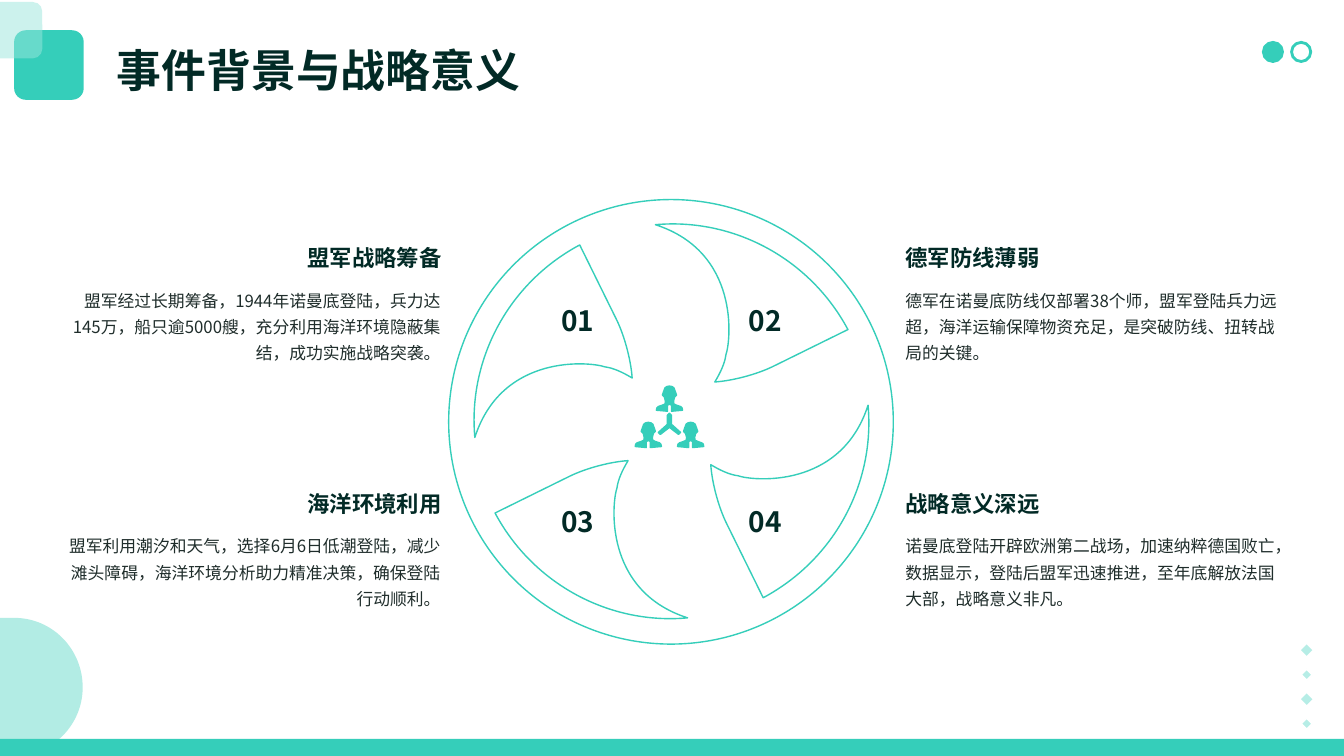
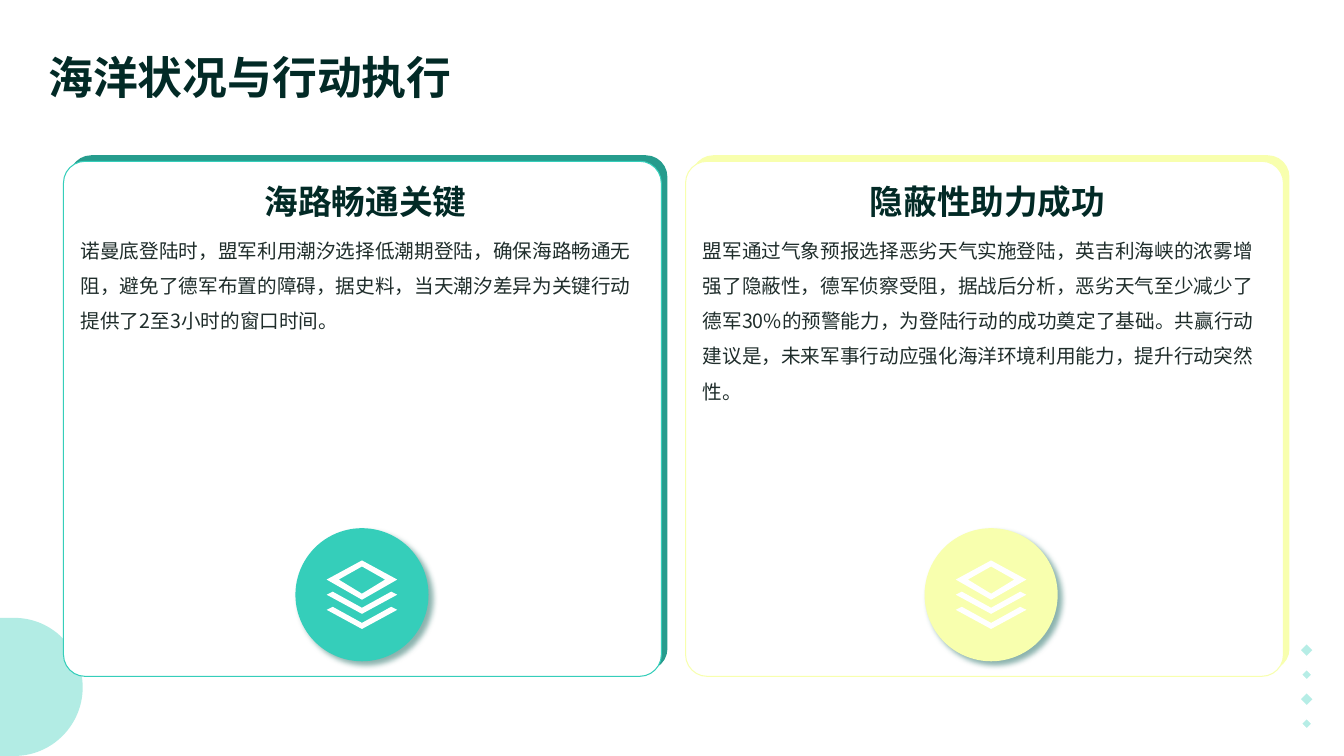
"""Build two slides on the Normandy landing: a four-blade pinwheel and a pair of cards."""
import pptx
import pptx.util
import pptx.dml.color
import pptx.enum.shapes
import pptx.enum.text
import pptx.oxml.ns
import lxml.etree

SHAPE = pptx.enum.shapes.MSO_SHAPE
ALIGN = pptx.enum.text.PP_ALIGN
ANCHOR = pptx.enum.text.MSO_ANCHOR
WIDTH, HEIGHT = 13.33, 7.5
FONT = "Noto Sans CJK SC"
TEAL, DEEP, PALE, LEMON = "35CEBA", "269C8D", "9AE6DC", "F8FFAE"
WHITE, SHADOW, HEADING, BODY = "FFFFFF", "19685E", "022A26", "1F2D2B"

TITLE_STYLE = dict(size=32, color=HEADING, bold=True, anchor=ANCHOR.MIDDLE, inset=(0.1, 0.05),
                   para=dict(line_spacing=1.2))
NUMBER_STYLE = dict(TITLE_STYLE, size=20, para=dict(line_spacing=1.2, alignment=ALIGN.CENTER))
HEAD_STYLE = dict(size=16, color=HEADING, bold=True, anchor=ANCHOR.MIDDLE)
CARD_HEAD_STYLE = dict(size=24, color=HEADING, bold=True, anchor=ANCHOR.BOTTOM,
                       para=dict(alignment=ALIGN.CENTER))
BODY_SPACING = dict(space_before=pptx.util.Pt(3), space_after=pptx.util.Pt(3))

TOPICS_TITLE = "事件背景与战略意义"
TOPICS = [
    ("盟军战略筹备", "盟军经过长期筹备，1944年诺曼底登陆，兵力达145万，船只逾5000艘，充分利用海洋环境隐蔽集结，成功实施战略突袭。"),
    ("德军防线薄弱", "德军在诺曼底防线仅部署38个师，盟军登陆兵力远超，海洋运输保障物资充足，是突破防线、扭转战局的关键。"),
    ("海洋环境利用", "盟军利用潮汐和天气，选择6月6日低潮登陆，减少滩头障碍，海洋环境分析助力精准决策，确保登陆行动顺利。"),
    ("战略意义深远", "诺曼底登陆开辟欧洲第二战场，加速纳粹德国败亡，数据显示，登陆后盟军迅速推进，至年底解放法国大部，战略意义非凡。"),
]
TOPIC_COLUMNS = [(0.69, 0.6, 5.2, ALIGN.RIGHT), (8.98, 8.98, 7.06, ALIGN.LEFT)]
TOPIC_ROWS = [(2.3, 2.95), (4.74, 4.95)]

CARDS_TITLE = "海洋状况与行动执行"
CARDS = [
    ("海路畅通关键", "诺曼底登陆时，盟军利用潮汐选择低潮期登陆，确保海路畅通无阻，避免了德军布置的障碍，据史料，当天潮汐差异为关键行动提供了2至3小时的窗口时间。", DEEP, TEAL),
    ("隐蔽性助力成功", "盟军通过气象预报选择恶劣天气实施登陆，英吉利海峡的浓雾增强了隐蔽性，德军侦察受阻，据战后分析，恶劣天气至少减少了德军30%的预警能力，为登陆行动的成功奠定了基础。共赢行动建议是，未来军事行动应强化海洋环境利用能力，提升行动突然性。", LEMON, LEMON),
]

CORNER = [(0.14, 0), (0, 0), (0, 1.37), (0.14, 1.37),
          (0.52, 1.37, 0.82, 1.06, 0.82, 0.69), (0.82, 0.31, 0.52, 0, 0.14, 0)]
BLADE = [(-0.55, -1.02), (-0.91, -1.75), (-1.62, -1.37, -2.02, -0.61, -1.95, 0.16),
         (-1.68, -0.68, -0.8, -0.59, -0.66, -0.54), (-0.58, -0.53, -0.49, -0.49, -0.39, -0.43),
         (-0.4, -0.59, -0.46, -0.84, -0.55, -1.02)]
HALF_PERSON = [(0, 0), (0.04, 0, 0.06, 0.03, 0.06, 0.06), (0.07, 0.09), (0.05, 0.11),
               (0.04, 0.15), (0.03, 0.18, 0.05, 0.18, 0.07, 0.19),
               (0.1, 0.2, 0.13, 0.2, 0.13, 0.24), (0.02, 0.25), (0.02, 0.19), (0, 0.18)]
HALF_FORK = [(0, 0.27), (0.02, 0.29), (0.02, 0.38), (0.11, 0.46), (0.09, 0.48), (0, 0.41)]
PEOPLE = [(0, 0), (-0.21, 0.36), (0.21, 0.36)]
CHEVRON = [(0, 0.62), (0.29, 0.46), (0.35, 0.49), (0, 0.68)]
DIAMOND = [[(0, 0), (0.35, 0.19), (0, 0.39)], [(0, 0.06), (0.23, 0.19), (0, 0.33)]]


def rgb(value):
    return pptx.dml.color.RGBColor.from_string(value)


def inches(*lengths):
    return [pptx.util.Inches(v) for v in lengths]


def child(parent, tag, **attributes):
    node = lxml.etree.SubElement(parent, pptx.oxml.ns.qn(tag))
    for name, value in attributes.items():
        node.set(name, str(value))
    return node


def paint(sp, fill=None, line=None, weight=1, alpha=None):
    sp.shadow.inherit = False
    if fill:
        sp.fill.solid()
        sp.fill.fore_color.rgb = rgb(fill)
        if alpha:
            color = sp._element.spPr.find(".//" + pptx.oxml.ns.qn("a:srgbClr"))
            child(color, "a:alpha", val=alpha * 1000)
    else:
        sp.fill.background()
    if line:
        sp.line.color.rgb = rgb(line)
        sp.line.width = pptx.util.Pt(weight)
    else:
        sp.line.fill.background()
    return sp


def add_shape(s, kind, x, y, w, h, **look):
    return paint(s.shapes.add_shape(kind, *inches(x, y, w, h)), **look)


def cast_shadow(sp):
    effects = sp._element.spPr.find(pptx.oxml.ns.qn("a:effectLst"))
    shadow = child(effects, "a:outerShdw", blurRad=pptx.util.Pt(4), dist=pptx.util.Pt(4),
                   dir=45 * 60000, algn="tl", rotWithShape=0)
    child(child(shadow, "a:srgbClr", val=SHADOW), "a:alpha", val=50000)


def pairs(part):
    return list(zip(part[::2], part[1::2]))


def transformed(outline, rule):
    return [sum((rule(x, y) for x, y in pairs(part)), ()) for part in outline]


def shifted(outline, dx, dy):
    return transformed(outline, lambda x, y: (x + dx, y + dy))


def mirrored(half):
    back = [half[-1][-2:]]
    for before, part in reversed(list(zip(half, half[1:]))):
        points = [before[-2:]] + pairs(part)[:-1]
        back.append(sum(reversed(points), ()))
    return half + transformed(back, lambda x, y: (-x, y))


def bend(sp, contours):
    lines = iter(list(sp._element.spPr.iter(pptx.oxml.ns.qn("a:lnTo"))))
    for part in (part for outline in contours for part in outline[1:]):
        run = [next(lines) for _ in pairs(part)]
        if len(run) == 3:
            curve = lxml.etree.Element(pptx.oxml.ns.qn("a:cubicBezTo"))
            run[0].addprevious(curve)
            for node in run:
                curve.append(node[0])
                node.getparent().remove(node)


def add_outline(s, contours, x, y, **look):
    contours = [transformed(outline, lambda px, py: ((px + x) * 1000, (py + y) * 1000))
                for outline in contours]
    builder = s.shapes.build_freeform(*contours[0][0], scale=914.4)
    for i, outline in enumerate(contours):
        if i:
            builder.move_to(*outline[0])
        builder.add_line_segments([point for part in outline[1:] for point in pairs(part)], close=True)
    sp = builder.convert_to_shape()
    bend(sp, contours)
    return paint(sp, **look)


def add_text(s, text, x, y, w, h, size, color, bold=False, anchor=ANCHOR.TOP, inset=(0, 0), para=None):
    tf = s.shapes.add_textbox(*inches(x, y, w, h)).text_frame
    across, down = inches(*inset)
    frame = dict(word_wrap=True, vertical_anchor=anchor, margin_left=across, margin_right=across,
                 margin_top=down, margin_bottom=down)
    p = tf.paragraphs[0]
    r = p.add_run()
    r.text = text
    font = dict(size=pptx.util.Pt(size), bold=bold, name=FONT)
    for target, values in ((tf, frame), (p, para or {}), (r.font, font)):
        for name, value in values.items():
            setattr(target, name, value)
    r.font.color.rgb = rgb(color)
    properties = r._r.get_or_add_rPr()
    properties.set("lang", "zh-CN")
    child(properties, "a:ea", typeface=FONT)


def new_slide(prs):
    s = prs.slides.add_slide(prs.slide_layouts[6])
    add_outline(s, [CORNER], 0, 6.13, fill=TEAL, alpha=38)
    for i in range(4):
        sp = add_shape(s, SHAPE.RECTANGLE, 12.92, 6.41 + i * 0.73 / 3, 0.08, 0.08, fill=TEAL, alpha=36,
                       line=WHITE if i % 2 else None, weight=1.25)
        sp.rotation = 45
    return s


def topics_slide(prs):
    s = new_slide(prs)
    for i, (head, body) in enumerate(TOPICS):
        head_x, body_x, number_x, align = TOPIC_COLUMNS[i % 2]
        head_y, number_y = TOPIC_ROWS[i // 2]
        add_text(s, head, head_x, head_y, 3.69, 0.51, **HEAD_STYLE, para=dict(alignment=align))
        add_text(s, body, body_x, head_y + 0.52, 3.77, 1.56, size=12, color=BODY,
                 para=dict(BODY_SPACING, alignment=align, line_spacing=1.3))
        add_text(s, f"{i + 1:02}", number_x, number_y, 1.06, 0.38, **NUMBER_STYLE)
    blade = BLADE
    for _ in range(4):
        add_outline(s, [blade], 6.66, 4.18, line=TEAL)
        blade = transformed(blade, lambda x, y: (-y, x))
    add_shape(s, SHAPE.OVAL, 4.45, 1.98, 4.41, 4.41, line=TEAL)
    team = [shifted(mirrored(HALF_PERSON), *place) for place in PEOPLE] + [mirrored(HALF_FORK)]
    add_outline(s, team, 6.64, 3.83, fill=TEAL, line=TEAL)
    add_text(s, TOPICS_TITLE, 1.06, 0.24, 10.18, 0.79, **TITLE_STYLE)
    for x, fill in ((12.53, TEAL), (12.81, None)):
        add_shape(s, SHAPE.OVAL, x, 0.42, 0.19, 0.19, fill=fill, line=TEAL, weight=2)
    add_shape(s, SHAPE.RECTANGLE, 0, HEIGHT - 0.17, WIDTH, 0.17, fill=TEAL)
    add_shape(s, SHAPE.ROUNDED_RECTANGLE, 0.14, 0.3, 0.69, 0.69, fill=TEAL)
    add_shape(s, SHAPE.ROUNDED_RECTANGLE, -0.14, 0.02, 0.56, 0.56, fill=PALE, alpha=50)


def cards_slide(prs):
    s = new_slide(prs)
    add_text(s, CARDS_TITLE, 0.38, 0.31, 12.57, 0.79, **TITLE_STYLE)
    chevron = mirrored(CHEVRON)
    layers = [chevron, shifted(chevron, 0, -0.15)] + [mirrored(half) for half in DIAMOND]
    for i, (head, body, back, accent) in enumerate(CARDS):
        x, y = 0.63 + i * 6.17, 1.6
        for offset, look in ((0.06, dict(fill=back)), (0, dict(fill=WHITE, line=accent, weight=0.75))):
            sp = add_shape(s, SHAPE.ROUNDED_RECTANGLE, x + offset, y - offset, 5.93, 5.11, **look)
            sp.adjustments[0] = 0.042
        add_text(s, head, x + 0.17, 1.61, 5.65, 0.58, **CARD_HEAD_STYLE)
        add_text(s, body, x + 0.17, 2.25, 5.65, 2.67, size=14, color=BODY,
                 para=dict(BODY_SPACING, line_spacing=1.5))
        badge_x = 2.93 + i * 6.24
        cast_shadow(add_shape(s, SHAPE.OVAL, badge_x, 5.24, 1.32, 1.32, fill=accent))
        add_outline(s, layers, badge_x + 0.66, 5.56, fill=WHITE)


def main():
    prs = pptx.Presentation()
    prs.slide_width, prs.slide_height = inches(WIDTH, HEIGHT)
    topics_slide(prs)
    cards_slide(prs)
    prs.save("out.pptx")


if __name__ == "__main__":
    main()
